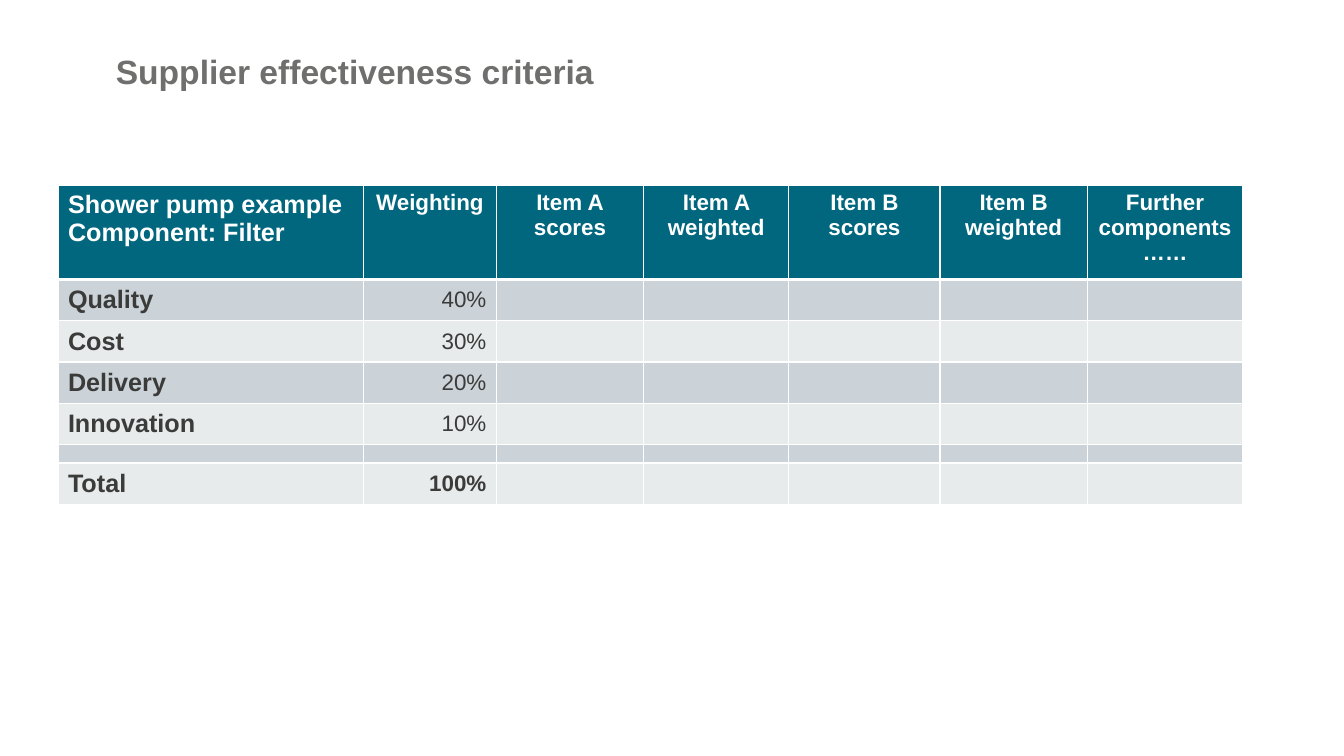
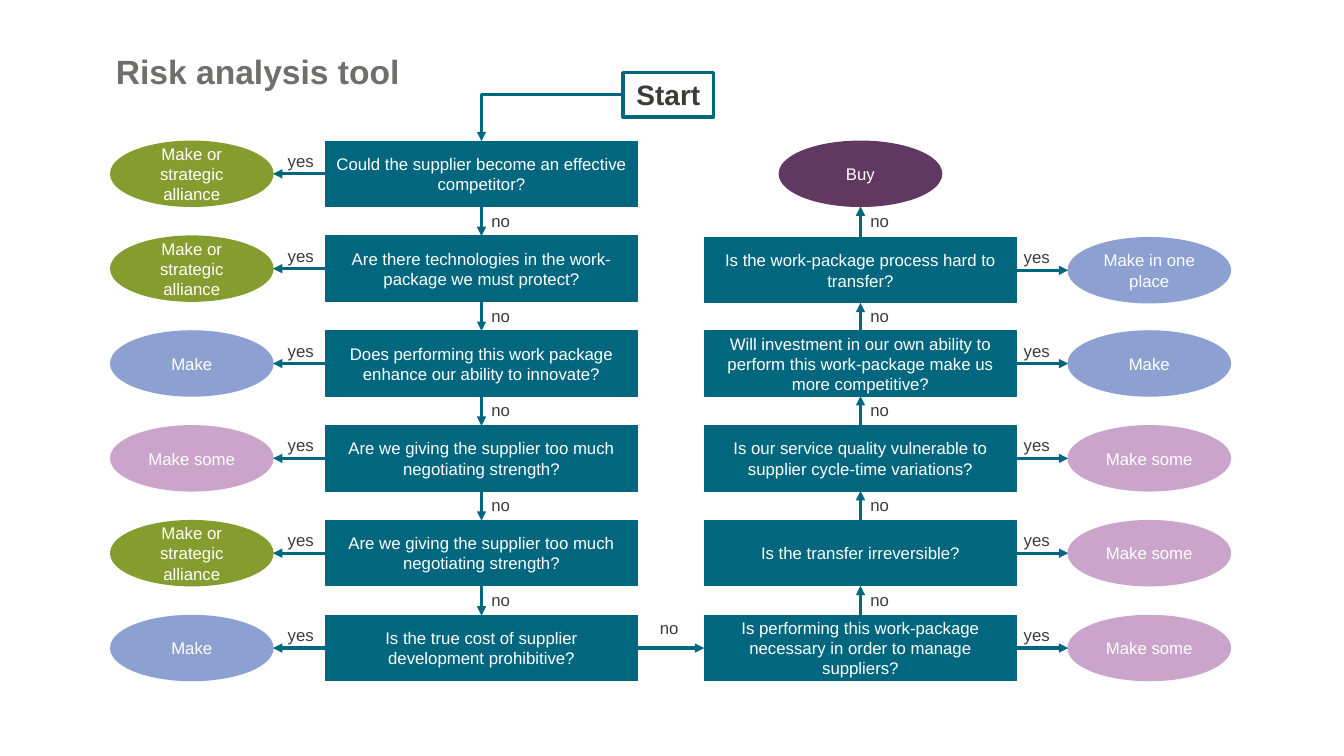
"""Build a supplier scoring table and a make-or-buy flowchart."""
from lxml import etree
from pptx import Presentation
from pptx.dml.color import RGBColor
from pptx.enum import shapes, text
from pptx.oxml import ns
from pptx.util import Cm, Pt

TEAL = RGBColor(0x00, 0x67, 0x7F)
GREEN = RGBColor(0x86, 0x9C, 0x2F)
BLUE = RGBColor(0x8C, 0xA1, 0xD2)
PINK = RGBColor(0xCB, 0xA4, 0xCB)
PURPLE = RGBColor(0x61, 0x38, 0x61)
GREY = RGBColor(0x6F, 0x6F, 0x6E)
INK = RGBColor(0x3B, 0x3B, 0x3A)
WHITE = RGBColor(0xFF, 0xFF, 0xFF)
BANDS = (RGBColor(0xE7, 0xEB, 0xEC), RGBColor(0xCC, 0xD3, 0xD8))
FONT = "Arial"
LEFT, CENTER, RIGHT = text.PP_ALIGN.LEFT, text.PP_ALIGN.CENTER, text.PP_ALIGN.RIGHT
RECT, OVAL = shapes.MSO_SHAPE.RECTANGLE, shapes.MSO_SHAPE.OVAL
TOP_SITE, LEFT_SITE, BOTTOM_SITE, RIGHT_SITE = range(4)

HEADER = ["Shower pump example\nComponent: Filter", "Weighting", "Item A\nscores",
          "Item A weighted", "Item B scores", "Item B weighted", "Further components ……"]
CRITERIA = [("Quality", "40%"), ("Cost", "30%"), ("Delivery", "20%"),
            ("Innovation", "10%"), ("", ""), ("Total", "100%")]
COL_WIDTHS = (7.7, 3.35, 3.71, 3.66, 3.81, 3.71, 3.92)
HEADER_HEIGHT, ROW_HEIGHT, SPACER_HEIGHT = 2.36, 1.04, 0.46

ALLIANCE = ("Make or strategic alliance", GREEN)
MAKE = ("Make", BLUE)
MAKE_SOME = ("Make some", PINK)
BUY = ("Buy", PURPLE)
LEFT_STEPS = [
    ("Could the supplier become an effective competitor?", ALLIANCE),
    ("Are there technologies in the work-package we must protect?", ALLIANCE),
    ("Does performing this work package enhance our ability to innovate?", MAKE),
    ("Are we giving the supplier too much negotiating strength?", MAKE_SOME),
    ("Are we giving the supplier too much negotiating strength?", ALLIANCE),
    ("Is the true cost of supplier development prohibitive?", MAKE),
]
RIGHT_STEPS = [
    ("Is the work-package process hard to transfer?", ("Make in one place", BLUE)),
    ("Will investment in our own ability to perform this work-package make us "
     "more competitive?", MAKE),
    ("Is our service quality vulnerable to supplier cycle-time variations?", MAKE_SOME),
    ("Is the transfer irreversible?", MAKE_SOME),
    ("Is performing this work-package necessary in order to manage suppliers?", MAKE_SOME),
]
FLOW_TOP, PITCH, NODE_HEIGHT = 3.56, 2.39, 1.64
QUESTION_WIDTH, ANSWER_WIDTH = 7.87, 4.09
LEFT_X, RIGHT_X = 8.2, 17.75
LEFT_ANSWER_X, RIGHT_ANSWER_X = 2.79, 26.92


def write(tf, words, size, color, bold=False, align=LEFT):
    tf.text = words
    for p in tf.paragraphs:
        p.alignment = align
        for r in p.runs:
            r.font.name, r.font.size, r.font.bold = FONT, Pt(size), bold
            r.font.color.rgb = color


def add_label(s, words, x, y, w, h, size=12, color=INK, bold=False):
    sp = s.shapes.add_textbox(Cm(x), Cm(y), Cm(w), Cm(h))
    sp.text_frame.word_wrap = True
    write(sp.text_frame, words, size, color, bold)
    return sp


def add_titled_slide(prs, words, width):
    s = prs.slides.add_slide(prs.slide_layouts[6])
    tf = add_label(s, words, 2.92, 1.27, width, 1.27, 24, GREY, True).text_frame
    tf.margin_left = 0
    tf.paragraphs[0].line_spacing = 0.9
    return s


def set_borders(cell, bottom):
    tc_pr = cell._tc.get_or_add_tcPr()
    for side, width in (("L", 1), ("R", 1), ("T", 1), ("B", bottom)):
        ln = etree.SubElement(tc_pr, ns.qn(f"a:ln{side}"), w=str(Pt(width)))
        fill = etree.SubElement(ln, ns.qn("a:solidFill"))
        etree.SubElement(fill, ns.qn("a:srgbClr"), val=str(WHITE))


def fill_cell(cell, words, row, col):
    header = row == 0
    set_borders(cell, 3 if header else 1)
    cell.fill.solid()
    cell.fill.fore_color.rgb = TEAL if header else BANDS[row % 2]
    if not header:
        cell.vertical_anchor = text.MSO_ANCHOR.MIDDLE
    first = col == 0
    align = LEFT if first else CENTER if header else RIGHT
    bold = header or first or row == len(CRITERIA)
    write(cell.text_frame, words, 18 if first else 16, WHITE if header else INK, bold, align)


def build_criteria(prs):
    s = add_titled_slide(prs, "Supplier effectiveness criteria", 28.65)
    rows = [HEADER] + [[*pair] + [""] * (len(HEADER) - 2) for pair in CRITERIA]
    heights = [HEADER_HEIGHT] + [ROW_HEIGHT if name else SPACER_HEIGHT for name, _ in CRITERIA]
    table = s.shapes.add_table(len(rows), len(HEADER), Cm(1.46), Cm(4.68),
                               Cm(sum(COL_WIDTHS)), Cm(sum(heights))).table
    for column, width in zip(table.columns, COL_WIDTHS):
        column.width = Cm(width)
    for i, (words, height) in enumerate(zip(rows, heights)):
        table.rows[i].height = Cm(height)
        for j, word in enumerate(words):
            cell = table.cell(i, j)
            fill_cell(cell, word, i, j)
            if height == SPACER_HEIGHT:
                etree.SubElement(cell.text_frame.paragraphs[0]._p, ns.qn("a:endParaRPr"), sz="500")


def add_node(s, kind, words, color, x, y, w):
    sp = s.shapes.add_shape(kind, Cm(x), Cm(y), Cm(w), Cm(NODE_HEIGHT))
    sp.shadow.inherit = False
    sp.fill.solid()
    sp.fill.fore_color.rgb = sp.line.color.rgb = color
    sp.line.width = Pt(1)
    sp.text_frame.vertical_anchor = text.MSO_ANCHOR.MIDDLE
    write(sp.text_frame, words, 12, WHITE, align=CENTER)
    return sp


def add_start(s):
    sp = s.shapes.add_shape(RECT, Cm(15.7), Cm(1.83), Cm(2.29), Cm(1.12))
    sp.shadow.inherit = False
    sp.fill.background()
    sp.line.color.rgb, sp.line.width = TEAL, Pt(2.25)
    sp.text_frame.vertical_anchor = text.MSO_ANCHOR.TOP
    write(sp.text_frame, "Start", 20, INK, True, CENTER)
    return sp


def site_point(sp, site):
    dx, dy = ((1, 0), (0, 1), (1, 2), (2, 1))[site]
    return sp.left + sp.width * dx // 2, sp.top + sp.height * dy // 2


def add_arrow(s, a, a_site, b, b_site, bent=False):
    kind = shapes.MSO_CONNECTOR.ELBOW if bent else shapes.MSO_CONNECTOR.STRAIGHT
    cxn = s.shapes.add_connector(kind, *site_point(a, a_site), *site_point(b, b_site))
    cxn.begin_connect(a, a_site)
    if b.auto_shape_type == RECT:
        cxn.end_connect(b, b_site)
    cxn.line.color.rgb, cxn.line.width = TEAL, Pt(2.25)
    sp_pr = cxn._element.spPr
    if bent:
        sp_pr.find(ns.qn("a:prstGeom")).set("prst", "bentConnector2")
    etree.SubElement(sp_pr.find(ns.qn("a:ln")), ns.qn("a:tailEnd"), type="triangle")
    etree.SubElement(sp_pr, ns.qn("a:effectLst"))


def add_steps(s, steps, tops, x, answer_x, yes_x):
    questions = []
    out, into = (LEFT_SITE, RIGHT_SITE) if answer_x < x else (RIGHT_SITE, LEFT_SITE)
    for (question, answer), y in zip(steps, tops):
        box = add_node(s, RECT, question, TEAL, x, y, QUESTION_WIDTH)
        oval = add_node(s, OVAL, *answer, answer_x, y, ANSWER_WIDTH)
        add_arrow(s, box, out, oval, into)
        add_label(s, "yes", yes_x, y + 0.11, 1.22, 0.76)
        questions.append(box)
    return questions


def build_risk(prs):
    s = add_titled_slide(prs, "Risk analysis tool", 9.63)
    tops = [FLOW_TOP + i * PITCH for i in range(len(LEFT_STEPS))]
    right_tops = [tops[1] + 0.04] + tops[2:]
    left = add_steps(s, LEFT_STEPS, tops, LEFT_X, LEFT_ANSWER_X, 7)
    right = add_steps(s, RIGHT_STEPS, right_tops, RIGHT_X, RIGHT_ANSWER_X, 25.55)
    buy_x = RIGHT_X + (QUESTION_WIDTH - ANSWER_WIDTH) / 2
    right.insert(0, add_node(s, OVAL, *BUY, buy_x, FLOW_TOP, ANSWER_WIDTH))

    add_arrow(s, add_start(s), LEFT_SITE, left[0], TOP_SITE, bent=True)
    for i, top in enumerate(tops[:-1]):
        add_arrow(s, left[i], BOTTOM_SITE, left[i + 1], TOP_SITE)
        add_arrow(s, right[i + 1], TOP_SITE, right[i], BOTTOM_SITE)
        for x in (LEFT_X, RIGHT_X):
            add_label(s, "no", x + QUESTION_WIDTH / 2, top + NODE_HEIGHT - 0.02, 1.07, 0.76)
    add_arrow(s, left[-1], RIGHT_SITE, right[-1], LEFT_SITE)
    add_label(s, "no", 16.38, tops[-1] - 0.07, 1.07, 0.76)


def main():
    prs = Presentation()
    prs.slide_width, prs.slide_height = Cm(33.87), Cm(19.05)
    build_criteria(prs)
    build_risk(prs)
    prs.save("out.pptx")


if __name__ == "__main__":
    main()
